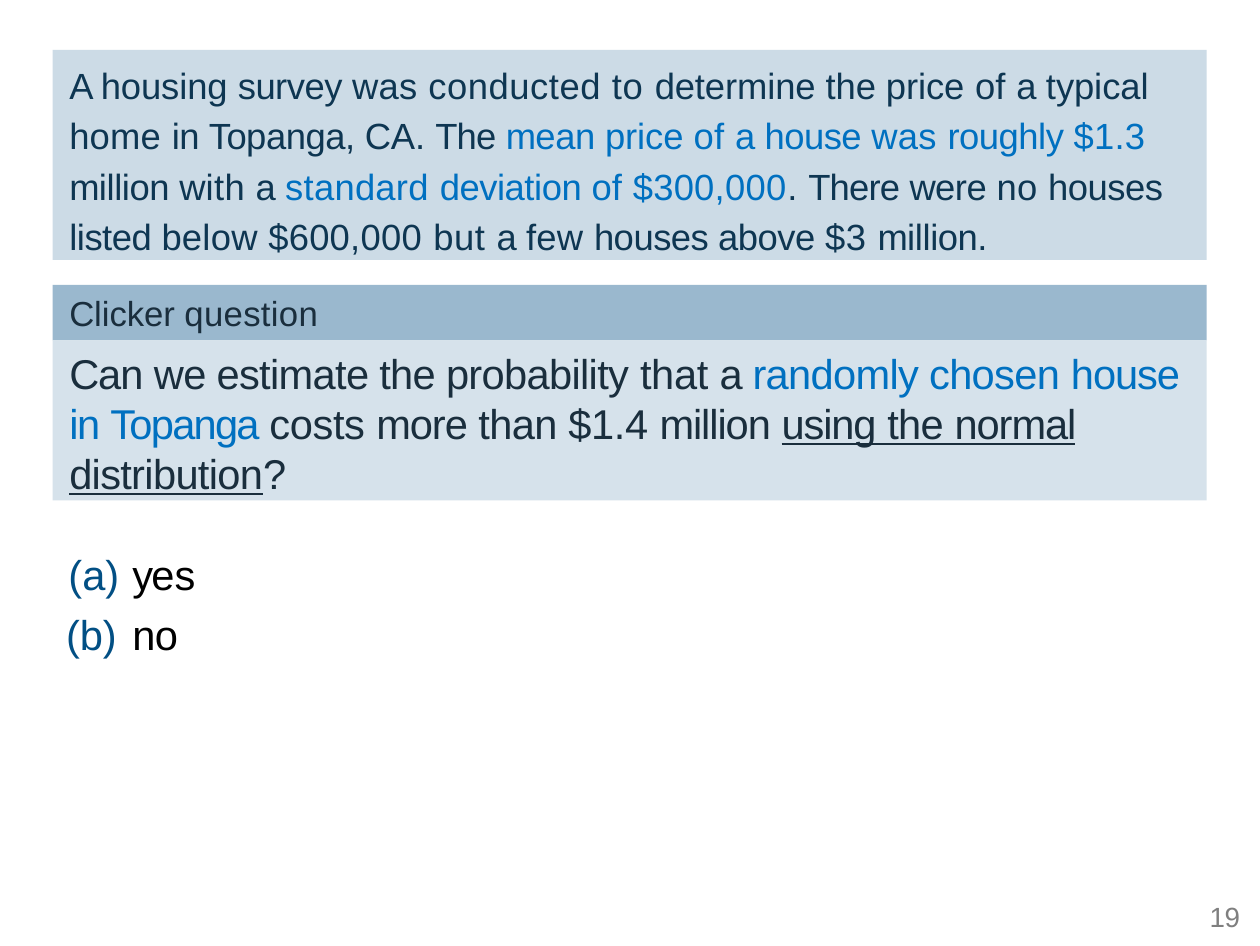
from lxml import etree
from pptx import Presentation
from pptx.dml.color import RGBColor
from pptx.enum.shapes import MSO_SHAPE
from pptx.enum.text import MSO_ANCHOR, PP_ALIGN
from pptx.oxml.ns import qn
from pptx.util import Pt

RECTANGLE, TOP, LEFT = MSO_SHAPE.RECTANGLE, MSO_ANCHOR.TOP, PP_ALIGN.LEFT

COLORS = {
    "survey fill": "CCDBE6", "header fill": "9AB8CE", "question fill": "D6E2EB",
    "navy": "0E3652", "slate": "1A2E3D", "blue": "0070C0",
    "label": "024F84", "black": "000000", "gray": "7F7F7F",
}

# Content: spans are (text, letter spacing in points, colour, underlined if given)
SURVEY = [
    ("A ", -0.2, "navy"), ("housing ", 0, "navy"), ("survey ", -0.1, "navy"),
    ("was ", 0.1, "navy"), ("conducted to ", 0.2, "navy"),
    ("determine the price ", 0, "navy"), ("of ", 0.1, "navy"),
    ("a ", -0.2, "navy"), ("typical ", 0, "navy"), ("home ", 0.1, "navy"),
    ("in ", -0.2, "navy"), ("Topanga, ", -0.1, "navy"), ("CA. ", 0, "navy"),
    ("The ", -0.2, "navy"), ("mean ", -0.1, "blue"), ("price ", 0, "blue"),
    ("of ", 0.1, "blue"), ("a ", -0.2, "blue"), ("house ", -0.1, "blue"),
    ("was ", 0.1, "blue"), ("roughly ", -0.1, "blue"), ("$1.3 ", 0.1, "blue"),
    ("million ", -0.1, "navy"), ("with ", 0.1, "navy"), ("a ", -0.2, "navy"),
    ("standard ", 0.1, "blue"), ("deviation ", -0.1, "blue"),
    ("of $300,000", 0.1, "blue"), (". ", 0.1, "navy"), ("There ", -0.2, "navy"),
    ("were ", -0.1, "navy"), ("no ", 0.1, "navy"),
    ("houses listed ", -0.1, "navy"), ("below $600,000 ", 0.1, "navy"),
    ("but ", 0.2, "navy"), ("a ", -0.2, "navy"), ("few ", 0.1, "navy"),
    ("houses above ", -0.1, "navy"), ("$3 ", 0.2, "navy"),
    ("million.", -0.1, "navy"),
]
HEADER = [("Clicker ", 0, "slate"), ("question", 0.1, "slate")]
QUESTION = [
    ("Can ", -0.3, "slate"), ("we estimate the probability ", -0.2, "slate"),
    ("that ", -0.1, "slate"), ("a ", -0.5, "slate"),
    ("randomly chosen ", -0.2, "blue"), ("house ", -0.3, "blue"),
    ("in ", -0.4, "blue"), ("Topanga ", -0.5, "blue"),
    ("costs ", -0.1, "slate"), ("more ", -0.3, "slate"),
    ("than ", -0.2, "slate"), ("$1.4 ", -0.1, "slate"),
    ("million ", -0.3, "slate"), ("using ", -0.3, "slate", True),
    ("the ", -0.2, "slate", True), ("normal ", -0.3, "slate", True),
    ("distribution", -0.2, "slate", True), ("?", -0.2, "slate"),
]
YES = [("ye", -0.5, "black"), ("s", -0.3, "black")]
NO = [("no", -0.2, "black")]
PAGE_NUMBER = [("19", -0.1, "gray")]

# Layout in points
PAGE_WIDTH, PAGE_HEIGHT = 363, 272.5
PANEL_LEFT, PANEL_WIDTH, PANEL_GAP = 15.2, 332.5, 7.2
SURVEY_TOP, SURVEY_HEIGHT = 14.4, 60.5
HEADER_HEIGHT, QUESTION_HEIGHT = 16, 46.1
TEXT_INDENT = 4.8
OPTION_INDENT = 20.16
HEADER_TOP = SURVEY_TOP + SURVEY_HEIGHT + PANEL_GAP
QUESTION_TOP = HEADER_TOP + HEADER_HEIGHT


def prepare_frame(box, inset):
    frame = box.text_frame
    settings = {"word_wrap": True, "vertical_anchor": TOP, "margin_left": 0,
                "margin_right": 0, "margin_top": Pt(inset), "margin_bottom": 0}
    for name, value in settings.items():
        setattr(frame, name, value)
    return frame


def set_indent(para, margin, first=0):
    properties = para._p.get_or_add_pPr()
    properties.set("marL", str(Pt(margin)))
    properties.set("indent", str(Pt(first)))
    return properties


def write(para, spans, size, before, line_spacing=1.0):
    formats = {"alignment": LEFT, "space_before": Pt(before),
               "line_spacing": line_spacing}
    for name, value in formats.items():
        setattr(para, name, value)
    for text, spacing, color, *underline in spans:
        span = para.add_run()
        span.text = text
        font = {"name": "Arial", "size": Pt(size), "underline": bool(underline)}
        for name, value in font.items():
            setattr(span.font, name, value)
        span.font.color.rgb = RGBColor.from_string(COLORS[color])
        span._r.get_or_add_rPr().set("spc", str(round(spacing * 100)))


def add_label(properties):
    """Number the paragraph as (a), (b), and so on."""
    color = etree.SubElement(properties, qn("a:buClr"))
    etree.SubElement(color, qn("a:srgbClr")).set("val", COLORS["label"])
    etree.SubElement(properties, qn("a:buFont")).set("typeface", "Arial")
    etree.SubElement(properties, qn("a:buAutoNum")).set("type", "alphaLcParenBoth")
    stops = etree.SubElement(properties, qn("a:tabLst"))
    stop = etree.SubElement(stops, qn("a:tab"))
    stop.set("pos", str(Pt(OPTION_INDENT)))
    stop.set("algn", "l")


def add_panel(page, top, height, fill, spans, size, before, line_spacing=1.0):
    box = page.shapes.add_shape(RECTANGLE, Pt(PANEL_LEFT), Pt(top),
                                Pt(PANEL_WIDTH), Pt(height))
    box.shadow.inherit = False
    box.fill.solid()
    box.fill.fore_color.rgb = RGBColor.from_string(COLORS[fill])
    box.line.fill.background()
    para = prepare_frame(box, 2).paragraphs[0]
    set_indent(para, TEXT_INDENT)
    write(para, spans, size, before, line_spacing)


deck = Presentation()
deck.slide_width, deck.slide_height = Pt(PAGE_WIDTH), Pt(PAGE_HEIGHT)
page = deck.slides.add_slide(deck.slide_layouts[6])

# Page number
box = page.shapes.add_textbox(Pt(347.76), Pt(258.6), Pt(10.8), Pt(11.52))
para = prepare_frame(box, 0.72).paragraphs[0]
set_indent(para, 0.72)
write(para, PAGE_NUMBER, 8, 0.6)

# Survey and question panels
add_panel(page, HEADER_TOP, HEADER_HEIGHT, "header fill", HEADER, 10, 2)
add_panel(page, QUESTION_TOP, QUESTION_HEIGHT, "question fill", QUESTION, 12, 2.8)
add_panel(page, SURVEY_TOP, SURVEY_HEIGHT, "survey fill", SURVEY, 10.5, 2, 1.15)

# Answer options
box = page.shapes.add_textbox(Pt(18), Pt(154.08), Pt(38.88), Pt(36.72))
frame = prepare_frame(box, 4)
options = [(YES, 4, -18.4), (NO, 3, -19.1)]
for index, (spans, before, hanging) in enumerate(options):
    para = frame.add_paragraph() if index else frame.paragraphs[0]
    write(para, spans, 12, before)
    add_label(set_indent(para, OPTION_INDENT, hanging))

deck.save("out.pptx")
